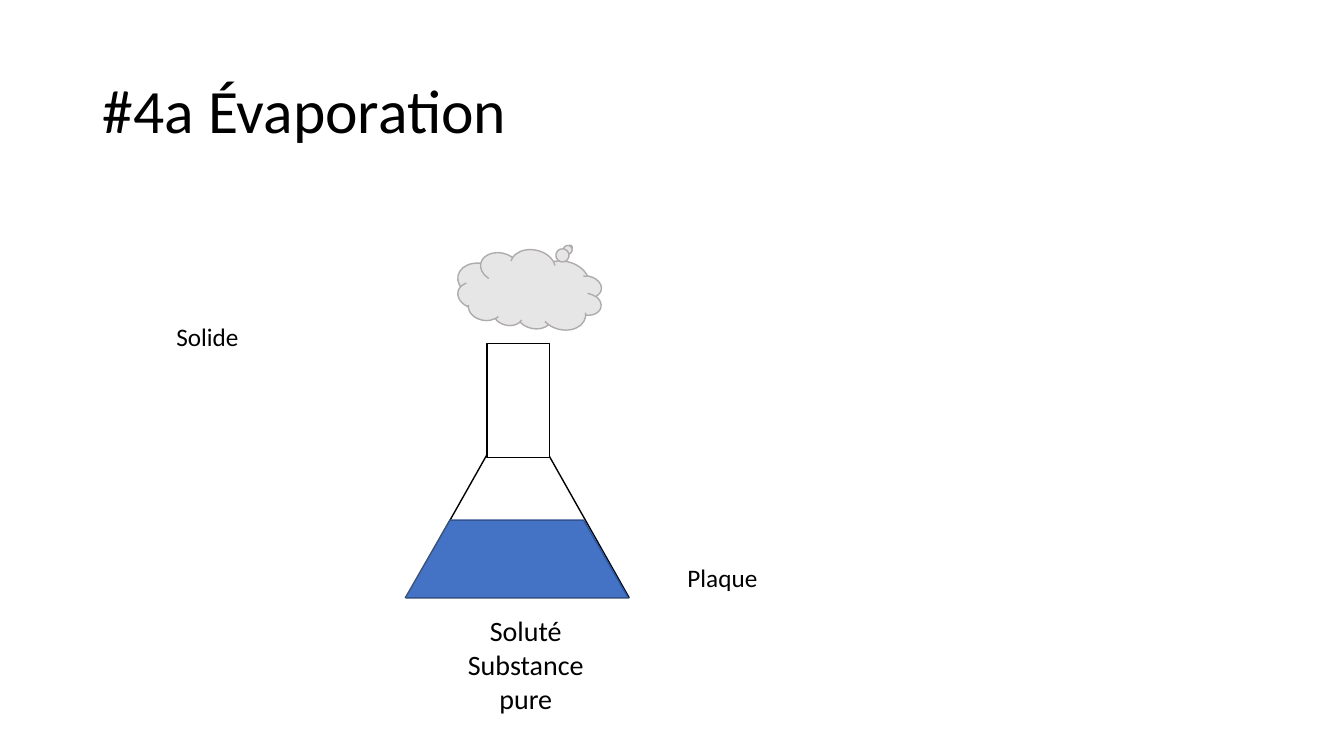
from pptx import Presentation
from pptx.dml.color import RGBColor
from pptx.enum.shapes import MSO_SHAPE
from pptx.enum.text import MSO_ANCHOR, PP_ALIGN
from pptx.util import Inches, Pt

prs = Presentation()
prs.slide_width, prs.slide_height = Inches(13.33), Inches(7.5)
s = prs.slides.add_slide(prs.slide_layouts[6])


def rgb(value):
    return RGBColor.from_string(value)


def add_label(lines, box, size, align=PP_ALIGN.LEFT):
    """Add a text box with one paragraph per line and return its text frame."""
    tf = s.shapes.add_textbox(*map(Inches, box)).text_frame
    tf.word_wrap = True
    tf.text = "\n".join(lines)
    for p in tf.paragraphs:
        p.alignment = align
        p.font.name = "Calibri"
        p.font.size = Pt(size)
        p.font.color.rgb = rgb("000000")
    return tf


title = add_label(["#4a Évaporation"], (0.92, 0.4, 11.5, 1.45), 44)
title.vertical_anchor = MSO_ANCHOR.MIDDLE
title.paragraphs[0].line_spacing = 0.9

# Flask body, neck, liquid and vapour, from back to front
flask = [
    (MSO_SHAPE.ISOSCELES_TRIANGLE, (4.03, 3.97, 2.21, 1.96), 0, None, "000000"),
    (MSO_SHAPE.RECTANGLE, (4.83, 3.41, 0.62, 1.13), 0, "FFFFFF", "000000"),
    (MSO_SHAPE.FLOWCHART_MANUAL_OPERATION, (4.02, 5.16, 2.21, 0.77), 180, "4472C4", "325491"),
    (MSO_SHAPE.CLOUD_CALLOUT, (4.53, 2.48, 1.45, 0.79), 192, "E7E6E6", "AFABAB"),
]
for kind, box, rotation, fill, line in flask:
    sp = s.shapes.add_shape(kind, *map(Inches, box))
    sp.shadow.inherit = False
    sp.rotation = rotation
    if fill:
        sp.fill.solid()
        sp.fill.fore_color.rgb = rgb(fill)
    else:
        sp.fill.background()
    sp.line.color.rgb = rgb(line)
    sp.line.width = Pt(1)

add_label(["Solide"], (1.65, 3.14, 2.11, 0.4), 18)
add_label(["Soluté", "Substance", "pure"], (4.38, 6.04, 1.67, 1.11), 20, PP_ALIGN.CENTER)
add_label(["Plaque"], (6.72, 5.53, 1.98, 0.4), 18)

prs.save("out.pptx")
